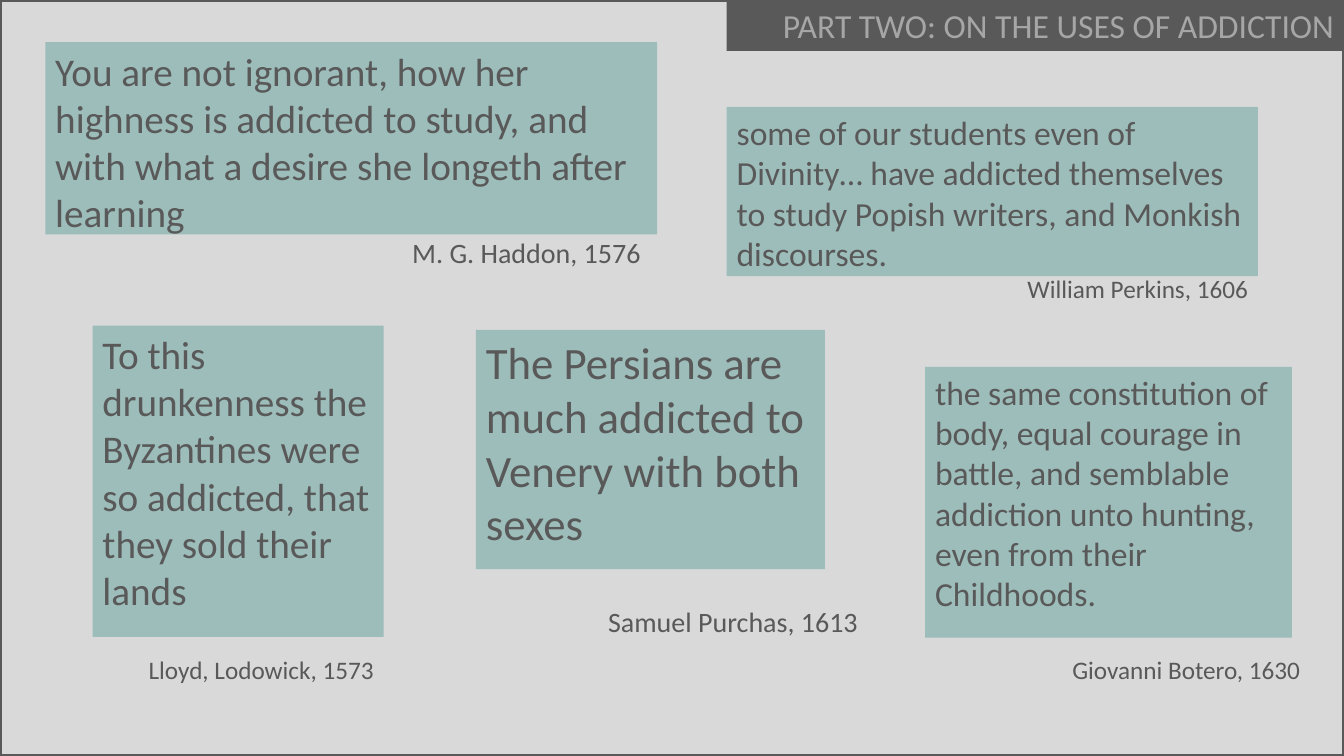
from pptx import Presentation
from pptx.dml.color import RGBColor
from pptx.enum.shapes import MSO_SHAPE
from pptx.enum.text import MSO_ANCHOR, PP_ALIGN
from pptx.util import Pt

PAPER = RGBColor(0xD9, 0xD9, 0xD9)
TEAL = RGBColor(0x9D, 0xBD, 0xBA)
CHARCOAL = RGBColor(0x59, 0x59, 0x59)
SILVER = RGBColor(0xA6, 0xA6, 0xA6)

WIDTH, HEIGHT = 960, 540
HEADING = "PART TWO: ON THE USES OF ADDICTION"
HEADING_LEFT, HEADING_HEIGHT = 519.1, 36.3

QUOTES = [
    {"text": "You are not ignorant, how her highness is addicted to study, "
             "and with what a desire she longeth after learning",
     "source": "M. G. Haddon, 1576 ", "sizes": (28, 20), "gap": 0,
     "panel": (32.4, 30.2, 437, 137.3), "text_area": (437, 167)},
    {"text": "To this drunkenness the Byzantines were so addicted, "
             "that they sold their lands",
     "source": "Lloyd, Lodowick, 1573", "sizes": (28, 18), "gap": 29.3,
     "panel": (66.1, 232.6, 208, 222.4), "text_area": (208, 262)},
    {"text": "some of our students even of Divinity… have addicted themselves "
             "to study Popish writers, and Monkish discourses.",
     "source": "William Perkins, 1606", "sizes": (24, 18), "gap": 0,
     "panel": (519.1, 76.3, 379.5, 120.9), "text_area": (379.5, 145.4)},
    {"text": "the same constitution of body, equal courage in battle, and semblable "
             "addiction unto hunting, even from their Childhoods.",
     "source": "Giovanni Botero, 1630", "sizes": (24, 18), "gap": 29.3,
     "panel": (660.8, 262, 262, 193.4), "text_area": (275, 232.6)},
    {"text": "The Persians are much addicted to Venery with both sexes",
     "source": "Samuel Purchas, 1613", "sizes": (32, 20), "gap": 39,
     "panel": (340, 235.6, 249.3, 171), "text_area": (280, 247)},
]


def add_rectangle(page, area, fill=None, line=None):
    box = page.shapes.add_shape(MSO_SHAPE.RECTANGLE, *map(Pt, area))
    box.shadow.inherit = False
    if fill is None:
        box.fill.background()
    else:
        box.fill.solid()
        box.fill.fore_color.rgb = fill
    if line is None:
        box.line.fill.background()
    else:
        box.line.color.rgb = line
        box.line.width = Pt(2.5)
    return box


def write(para, text, size, color, align, gap=0):
    para.alignment = align
    para.space_before = Pt(gap)
    span = para.add_run()
    span.text = text
    formats = {"name": "Calibri", "size": Pt(size)}
    for name, value in formats.items():
        setattr(span.font, name, value)
    span.font.color.rgb = color


def add_quote(page, quote):
    left, top = quote["panel"][:2]
    box = page.shapes.add_textbox(*map(Pt, (left, top, *quote["text_area"])))
    frame = box.text_frame
    frame.word_wrap = True
    quote_size, source_size = quote["sizes"]
    write(frame.paragraphs[0], quote["text"], quote_size, CHARCOAL, PP_ALIGN.LEFT)
    write(frame.add_paragraph(), quote["source"], source_size, CHARCOAL,
          PP_ALIGN.RIGHT, quote["gap"])


def main():
    deck = Presentation()
    deck.slide_width, deck.slide_height = Pt(WIDTH), Pt(HEIGHT)
    page = deck.slides.add_slide(deck.slide_layouts[6])
    page.background.fill.solid()
    page.background.fill.fore_color.rgb = PAPER

    for quote in QUOTES:
        add_rectangle(page, quote["panel"], fill=TEAL)

    heading = add_rectangle(
        page, (HEADING_LEFT, 0, WIDTH - HEADING_LEFT, HEADING_HEIGHT), fill=CHARCOAL)
    heading.text_frame.word_wrap = True
    heading.text_frame.vertical_anchor = MSO_ANCHOR.TOP
    write(heading.text_frame.paragraphs[0], HEADING, 24, SILVER, PP_ALIGN.RIGHT)
    add_rectangle(page, (0, 0, WIDTH, HEIGHT), line=CHARCOAL)

    for quote in QUOTES:
        add_quote(page, quote)
    deck.save("out.pptx")


if __name__ == "__main__":
    main()
